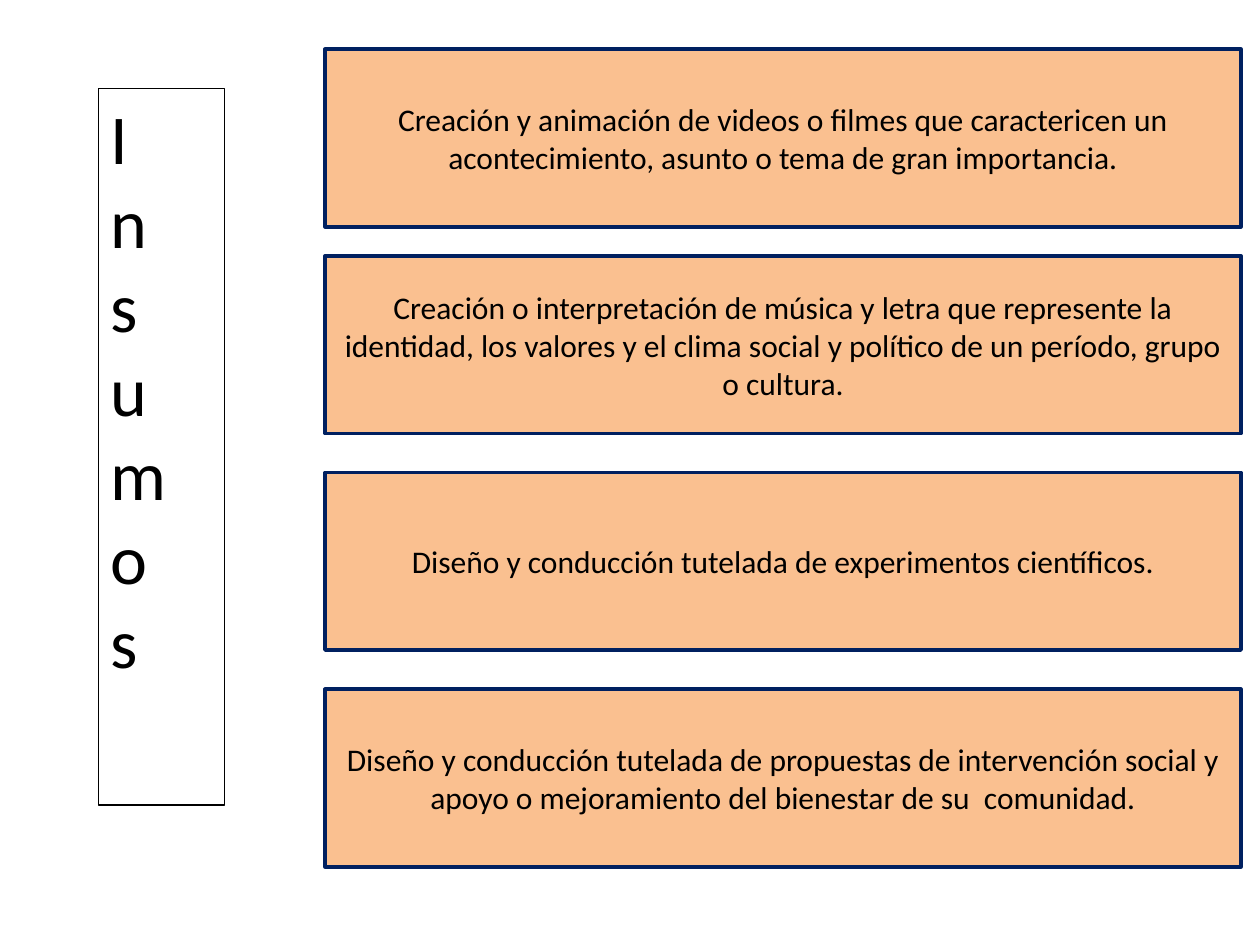
from pptx import Presentation
from pptx import util as u
from pptx.dml.color import RGBColor
from pptx.enum import shapes, text

PEACH = RGBColor(0xFA, 0xC0, 0x90)
NAVY = RGBColor(0x00, 0x20, 0x60)
BLACK = RGBColor(0x00, 0x00, 0x00)

INPUTS = [
    (0.39, "Creación y animación de videos o filmes que caractericen un "
           "acontecimiento, asunto o tema de gran importancia."),
    (2.03, "Creación o interpretación de música y letra que represente la "
           "identidad, los valores y el clima social y político de un período, "
           "grupo o cultura."),
    (3.75, "Diseño y conducción tutelada de experimentos científicos."),
    (5.47, "Diseño y conducción tutelada de propuestas de intervención social y "
           "apoyo o mejoramiento del bienestar de su  comunidad."),
]


def write(tf, content, size=18, font="Calibri", color=BLACK,
          align=text.PP_ALIGN.CENTER):
    p = tf.paragraphs[0]
    p.alignment = align
    r = p.add_run()
    r.text = content
    r.font.size = u.Pt(size)
    r.font.name = font
    r.font.color.rgb = color


class Deck:
    """Holds the style and the current slide."""

    def __init__(self, slide, fill, border):
        self.s = slide
        self.fill = fill
        self.border = border

    def box(self, left, top, width, height, content):
        sp = self.s.shapes.add_shape(
            shapes.MSO_SHAPE.RECTANGLE, u.Inches(left), u.Inches(top),
            u.Inches(width), u.Inches(height))
        sp.shadow.inherit = False
        sp.fill.solid()
        sp.fill.fore_color.rgb = self.fill
        sp.line.color.rgb = self.border
        sp.line.width = u.Pt(2)
        tf = sp.text_frame
        tf.word_wrap = True
        tf.vertical_anchor = text.MSO_ANCHOR.MIDDLE
        write(tf, content)

    def stacked_title(self, left, top, width, height, content):
        sp = self.s.shapes.add_textbox(
            u.Inches(left), u.Inches(top), u.Inches(width), u.Inches(height))
        sp.line.color.rgb = BLACK
        sp.line.width = u.Pt(0.75)
        tf = sp.text_frame
        tf.word_wrap = False
        tf.auto_size = text.MSO_AUTO_SIZE.SHAPE_TO_FIT_TEXT
        # Upright letters, one below the other
        tf._txBody.bodyPr.set("vert", "wordArtVert")
        write(tf, content, size=40, align=text.PP_ALIGN.LEFT)


def main():
    prs = Presentation()
    prs.slide_width = u.Inches(10)
    prs.slide_height = u.Inches(7.5)
    deck = Deck(prs.slides.add_slide(prs.slide_layouts[6]), PEACH, NAVY)

    # Input boxes
    for top, content in INPUTS:
        deck.box(2.58, top, 7.27, 1.41, content)

    # Vertical title
    deck.stacked_title(0.78, 0.7, 1, 5.69, "Insumos")

    prs.save("out.pptx")


if __name__ == "__main__":
    main()
